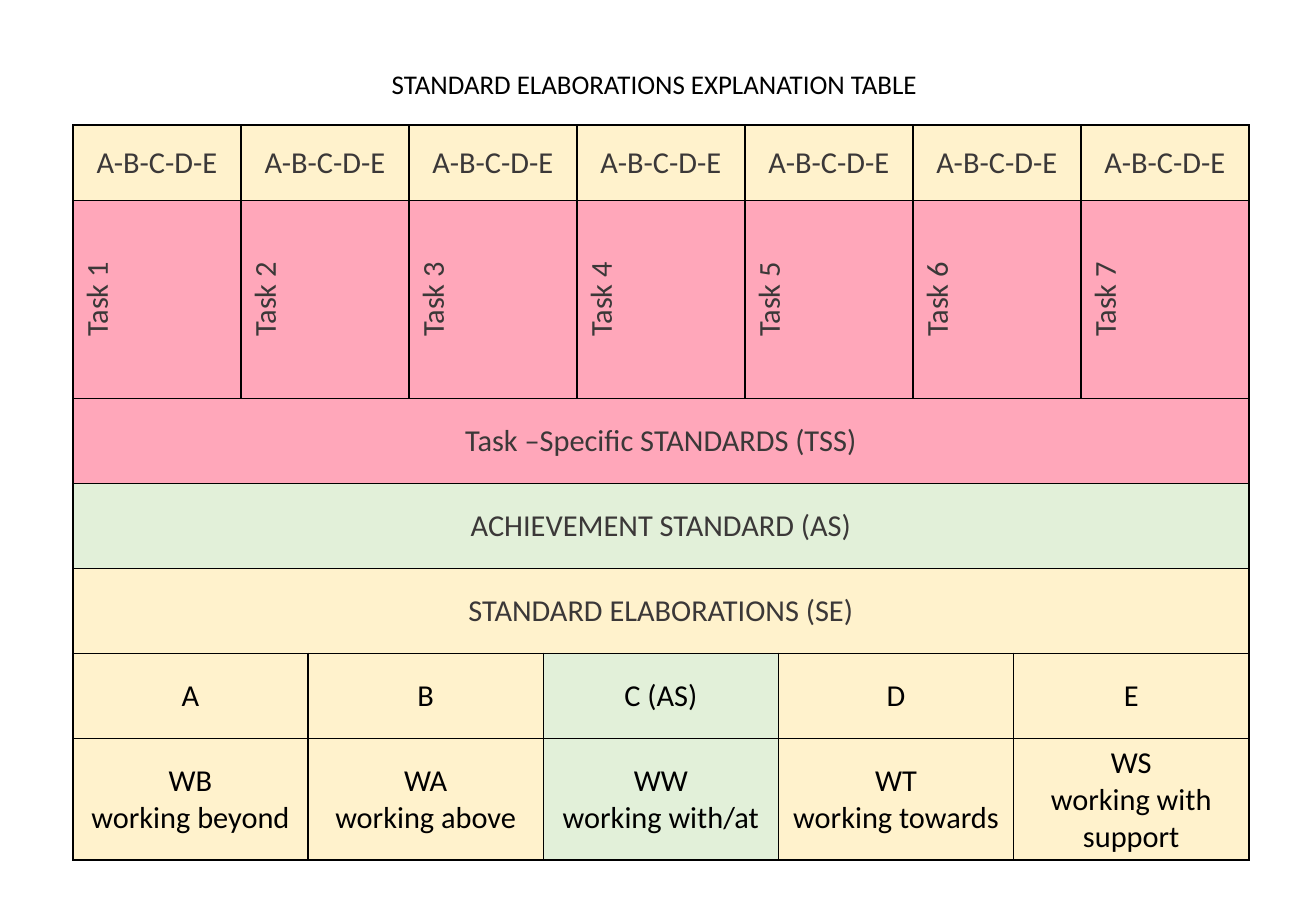
from dataclasses import dataclass

from lxml.etree import SubElement
from pptx import Presentation
from pptx.dml.color import RGBColor
from pptx.enum.text import MSO_ANCHOR, MSO_AUTO_SIZE, PP_ALIGN
from pptx.oxml.ns import qn
from pptx.table import Table, _Cell
from pptx.text.text import TextFrame
from pptx.util import Inches, Pt

HUES = {"cream": "FFF2CC", "pink": "FFA7BA", "green": "E2F0D9",
        "gray": "3B3838", "black": "000000"}
FONT = "Calibri"
UNITS = 35
WIDTH = 9.68
EDGES = sorted({*range(0, UNITS + 1, 5), *range(0, UNITS + 1, 7)})


@dataclass
class Band:
    height: float
    texts: list[str]
    fill: str
    ink: str = "gray"
    turned: bool = False
    middle: str = ""


BANDS = [
    Band(0.62, ["A-B-C-D-E"] * 7, "cream"),
    Band(1.63, [f"Task {n}" for n in range(1, 8)], "pink", turned=True),
    Band(0.7, ["Task –Specific STANDARDS (TSS)"], "pink"),
    Band(0.7, ["ACHIEVEMENT STANDARD (AS)"], "green"),
    Band(0.7, ["STANDARD ELABORATIONS (SE)"], "cream"),
    Band(0.7, ["A", "B", "C (AS)", "D", "E"], "cream", "black", middle="green"),
    Band(0.98, ["WB\nworking beyond", "WA\nworking above", "WW\nworking with/at",
                "WT\nworking towards", "WS\nworking with support"],
         "cream", "black", middle="green"),
]


def style_text(frame: TextFrame, size: int, ink: str) -> None:
    for para in frame.paragraphs:
        para.alignment = PP_ALIGN.CENTER
        for run in para.runs:
            run.font.name = FONT
            run.font.size = Pt(size)
            run.font.color.rgb = RGBColor.from_string(HUES[ink])


def style_cell(cell: _Cell, fill: str, turned: bool) -> None:
    props = cell._tc.get_or_add_tcPr()
    for side in ("lnL", "lnR", "lnT", "lnB"):
        line = SubElement(props, qn(f"a:{side}"), w=str(Pt(1)))
        paint = SubElement(line, qn("a:solidFill"))
        SubElement(paint, qn("a:srgbClr"), val=HUES["black"])
    cell.fill.solid()
    cell.fill.fore_color.rgb = RGBColor.from_string(HUES[fill])
    cell.vertical_anchor = MSO_ANCHOR.MIDDLE
    if turned:
        props.set("vert", "vert270")


def draw_band(table: Table, row: int, band: Band) -> None:
    table.rows[row].height = Inches(band.height)
    count = len(band.texts)
    step = UNITS // count
    for spot, text in enumerate(band.texts):
        first = EDGES.index(spot * step)
        last = EDGES.index((spot + 1) * step) - 1
        fill = band.middle if band.middle and spot == count // 2 else band.fill
        for col in range(first, last + 1):
            style_cell(table.cell(row, col), fill, band.turned)
        cell = table.cell(row, first)
        if last > first:
            cell.merge(table.cell(row, last))
        cell.text_frame.text = text
        style_text(cell.text_frame, 18, band.ink)


def main() -> None:
    deck = Presentation()
    deck.slide_width, deck.slide_height = Inches(10.83), Inches(7.5)
    slide = deck.slides.add_slide(deck.slide_layouts[5])

    title = slide.shapes.title
    title.left, title.top = Inches(2.34), Inches(0.51)
    title.width, title.height = Inches(6.09), Inches(0.37)
    frame = title.text_frame
    frame.text = "STANDARD ELABORATIONS EXPLANATION TABLE"
    frame.word_wrap = True
    frame.auto_size = MSO_AUTO_SIZE.SHAPE_TO_FIT_TEXT
    frame.vertical_anchor = MSO_ANCHOR.TOP
    style_text(frame, 16, "black")

    height = sum(band.height for band in BANDS)
    table = slide.shapes.add_table(
        len(BANDS), len(EDGES) - 1,
        Inches(0.6), Inches(1.03), Inches(WIDTH), Inches(height)).table
    table.first_row = table.horz_banding = False
    for col, start, end in zip(table.columns, EDGES, EDGES[1:]):
        col.width = Inches(WIDTH * (end - start) / UNITS)
    for row, band in enumerate(BANDS):
        draw_band(table, row, band)

    deck.save("out.pptx")


if __name__ == "__main__":
    main()
